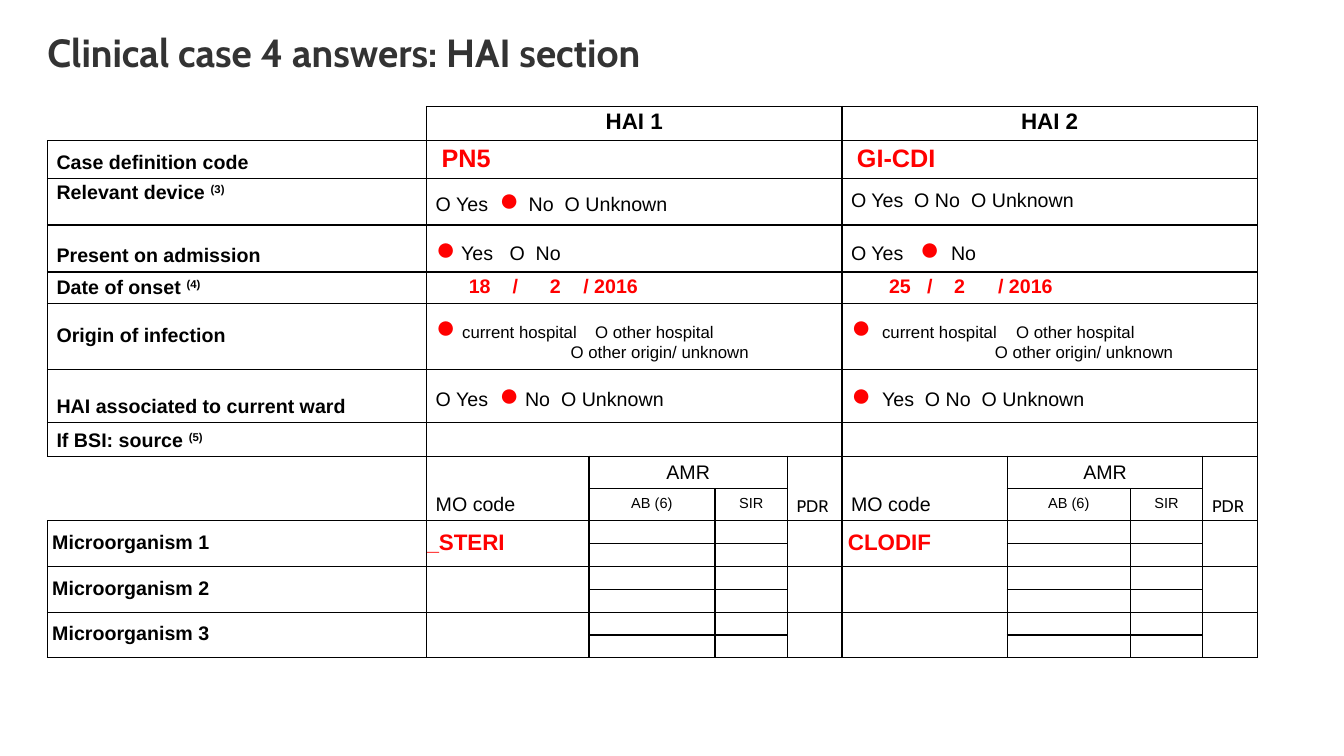
from dataclasses import dataclass
from itertools import product

from lxml.etree import SubElement
from pptx import Presentation
from pptx.dml.color import RGBColor
from pptx.enum.text import MSO_ANCHOR, PP_ALIGN
from pptx.oxml.ns import qn
from pptx.table import Table
from pptx.util import Inches, Pt

COLORS = {"title": "333333", "ink": "000000", "answer": "FF0000"}
SLIDE_WIDTH, SLIDE_HEIGHT = Inches(13.33), Inches(7.5)
COLUMN_SHARES = [28.21, 12.08, 9.38, 5.4, 4.05, 12.31, 9.15, 5.4, 4.05]
ROW_SHARES = [4.53, 4.93, 6.2, 6.2, 4.2, 8.74, 6.93, 4.53, 4.27, 4.27] + [3.02] * 6
LINE_SPACING = 0.9
HAI_COLUMNS = (1, 5)
AMR_ROW, FIRST_MICROORGANISM_ROW = 8, 10
TOP, MIDDLE, BOTTOM = MSO_ANCHOR.TOP, MSO_ANCHOR.MIDDLE, MSO_ANCHOR.BOTTOM


@dataclass(frozen=True)
class Line:
    text: str
    stops: tuple[float, ...] = ()


@dataclass(frozen=True)
class Field:
    row: int
    column: int
    lines: tuple[Line, ...] = ()
    rows: int = 1
    columns: int = 1
    size: float = 14
    bold: bool = False
    color: str = "ink"
    font: str = "Arial"
    note: str = ""
    raised: bool = False
    anchor: MSO_ANCHOR = MIDDLE
    align: PP_ALIGN = PP_ALIGN.LEFT
    side: float = 0.68
    edge: float = 0.67


@dataclass(frozen=True)
class Question:
    label: str
    answers: tuple[tuple[Line, ...], tuple[Line, ...]]
    note: str = ""
    label_anchor: MSO_ANCHOR = BOTTOM
    anchor: MSO_ANCHOR = MIDDLE
    size: float = 14
    bold: bool = False
    color: str = "ink"
    side: float = 0.68


QUESTIONS = [
    Question("Case definition code", ((Line("PN5"),), (Line("GI-CDI"),)),
             size=18, bold=True, color="answer", side=1.12),
    Question("Relevant device ", (
        (Line("O Yes\t●\tNo\tO Unknown", (4.72, 6.92, 9.6)),),
        (Line("O Yes\tO No\tO Unknown", (4.69, 8.93)),)), note="(3)", label_anchor=TOP),
    Question("Present on admission", (
        (Line("●\tYes\tO\tNo", (1.9, 5.5, 7.44)),),
        (Line("O Yes\t●\tNo", (5.1, 7.44)),)), anchor=BOTTOM),
    Question("Date of onset ", (
        (Line("\t18\t/\t2\t/ 2016", (2.46, 5.73, 8.5, 10.98)),),
        (Line("\t25\t/\t2\t/ 2016", (2.83, 5.65, 7.66, 10.94)),)),
        note="(4)", bold=True, color="answer"),
    Question("Origin of infection", (
        (Line("●\tcurrent hospital\tO other hospital", (1.97, 11.87)),
         Line("\tO other origin/ unknown", (10.04,))),
        (Line("●\tcurrent hospital\tO other hospital", (2.31, 12.28)),
         Line("\tO other origin/ unknown", (10.71,)))), label_anchor=MIDDLE, size=12),
    Question("HAI associated to current ward", (
        (Line("O Yes\t●\tNo\tO Unknown", (4.72, 6.65, 9.33)),),
        (Line("●\tYes\tO No\tO Unknown", (2.31, 5.5, 9.72)),))),
    Question("If BSI: source ", ((), ()), note="(5)"),
]


def across(percent: float) -> int:
    """Return a share of the slide's width."""
    return round(SLIDE_WIDTH * percent / 100)


def down(percent: float) -> int:
    """Return a share of the slide's height."""
    return round(SLIDE_HEIGHT * percent / 100)


def add_text(paragraph, text: str, *, size: float, color: str = "ink", font: str = "Arial",
             bold: bool = False, raised: bool = False) -> None:
    """Append a formatted run to a paragraph."""
    run = paragraph.add_run()
    run.text = text
    run.font.size, run.font.name, run.font.bold = Pt(size), font, bold
    run.font.color.rgb = RGBColor.from_string(COLORS[color])
    if raised:
        run.font._element.set("baseline", "30000")


def set_stops(paragraph, stops: tuple[float, ...]) -> None:
    """Place left tab stops at shares of the slide's width."""
    tab_list = SubElement(paragraph._p.get_or_add_pPr(), qn("a:tabLst"))
    for stop in stops:
        SubElement(tab_list, qn("a:tab"), pos=str(across(stop)), algn="l")


def write_lines(cell, field: Field) -> None:
    """Write a field's lines, with each chosen option's dot large and red."""
    for index, line in enumerate(field.lines):
        frame = cell.text_frame
        paragraph = frame.add_paragraph() if index else frame.paragraphs[0]
        paragraph.alignment = field.align
        paragraph.line_spacing = LINE_SPACING
        if line.stops:
            set_stops(paragraph, line.stops)
        before, dot, after = line.text.partition("●")
        for piece in (before, dot, after):
            if piece:
                chosen = piece == "●"
                add_text(paragraph, piece, size=24 if chosen else field.size,
                         color="answer" if chosen else field.color,
                         font=field.font, bold=field.bold, raised=field.raised)
        if field.note:
            add_text(paragraph, field.note, size=field.size, bold=field.bold, raised=True)


def draw_borders(table: Table, field: Field) -> None:
    """Rule the outer edges of a field and clear its fill."""
    for row, column in product(range(field.rows), range(field.columns)):
        cell = table.cell(field.row + row, field.column + column)
        properties = cell._tc.get_or_add_tcPr()
        first = row == column == 0
        open_left = field.column == 0 and field.row in (0, AMR_ROW)
        edges = {
            "L": column == 0 and not open_left,
            "R": first or column == field.columns - 1,
            "T": row == 0 and (field.row, field.column) != (0, 0),
            "B": first or row == field.rows - 1,
        }
        for edge, ruled in edges.items():
            border = SubElement(properties, qn(f"a:ln{edge}"), w=str(Pt(1)))
            fill = SubElement(border, qn("a:solidFill" if ruled else "a:noFill"))
            if ruled:
                SubElement(fill, qn("a:srgbClr"), val=COLORS["ink"])
        cell.fill.background()
        cell.margin_left = cell.margin_right = across(field.side if field.lines else 0)
        cell.margin_top = cell.margin_bottom = down(field.edge if field.lines else 0)
        if not first or not field.lines:
            SubElement(cell.text_frame.paragraphs[0]._p, qn("a:endParaRPr"), sz="800")


def draw_field(table: Table, field: Field) -> None:
    """Merge, rule and fill one field of the form."""
    cell = table.cell(field.row, field.column)
    if field.rows * field.columns > 1:
        cell.merge(table.cell(field.row + field.rows - 1, field.column + field.columns - 1))
    draw_borders(table, field)
    cell.vertical_anchor = field.anchor
    write_lines(cell, field)


def form_fields() -> list[Field]:
    """List every field of the form."""
    fields = [Field(0, 0), Field(AMR_ROW, 0, rows=2)]
    for row, question in enumerate(QUESTIONS, start=1):
        fields.append(Field(row, 0, (Line(question.label),), bold=True,
                            note=question.note, anchor=question.label_anchor))
        for column, answer in zip(HAI_COLUMNS, question.answers):
            fields.append(Field(row, column, answer, columns=4, size=question.size,
                                bold=question.bold, color=question.color,
                                anchor=question.anchor, side=question.side))
    for number, column in enumerate(HAI_COLUMNS, start=1):
        fields += [
            Field(0, column, (Line(f"HAI {number}"),), columns=4, size=16, bold=True,
                  anchor=TOP, align=PP_ALIGN.CENTER),
            Field(AMR_ROW, column, (Line("MO code"),), rows=2, anchor=BOTTOM),
            Field(AMR_ROW, column + 1, (Line("AMR"),), columns=2, anchor=BOTTOM,
                  align=PP_ALIGN.CENTER),
            Field(AMR_ROW, column + 3, (Line("PDR"),), rows=2, size=12, font="Cabin",
                  anchor=BOTTOM),
        ]
        for offset, heading in enumerate(("AB (6)", "SIR"), start=1):
            fields.append(Field(AMR_ROW + 1, column + offset, (Line(heading),), size=18,
                                raised=True, anchor=BOTTOM, align=PP_ALIGN.CENTER,
                                side=0, edge=0))
    codes = [("_STERI", 0), ("CLODIF", 0.45)]
    for index in range(3):
        row = FIRST_MICROORGANISM_ROW + 2 * index
        fields.append(Field(row, 0, (Line(f"Microorganism {index + 1}"),), rows=2,
                            bold=True, side=0.36))
        for column, (code, side) in zip(HAI_COLUMNS, codes):
            found = (Line(code),) if index == 0 else ()
            fields.append(Field(row, column, found, rows=2, size=16, bold=True,
                                color="answer", side=side, edge=0))
            fields += [Field(row + half, column + offset)
                       for half, offset in product(range(2), (1, 2))]
            fields.append(Field(row, column + 3, rows=2))
    return fields


def main() -> None:
    """Build the slide and save it."""
    deck = Presentation()
    deck.slide_width, deck.slide_height = SLIDE_WIDTH, SLIDE_HEIGHT
    slide = deck.slides.add_slide(deck.slide_layouts[6])
    title = slide.shapes.add_textbox(across(3.53), down(4.4), across(84.62), down(11.6)).text_frame
    title.word_wrap = True
    title.margin_left = title.margin_right = title.margin_top = title.margin_bottom = 0
    title.paragraphs[0].line_spacing = LINE_SPACING
    add_text(title.paragraphs[0], "Clinical case 4 answers: HAI section", size=28,
             color="title", font="Cabin", bold=True)
    form = slide.shapes.add_table(len(ROW_SHARES), len(COLUMN_SHARES), across(3.53), down(14.1),
                                  across(sum(COLUMN_SHARES)), down(sum(ROW_SHARES))).table
    form.first_row = form.horz_banding = False
    for column, share in zip(form.columns, COLUMN_SHARES):
        column.width = across(share)
    for row, share in zip(form.rows, ROW_SHARES):
        row.height = down(share)
    for field in form_fields():
        draw_field(form, field)
    deck.save("out.pptx")


if __name__ == "__main__":
    main()
